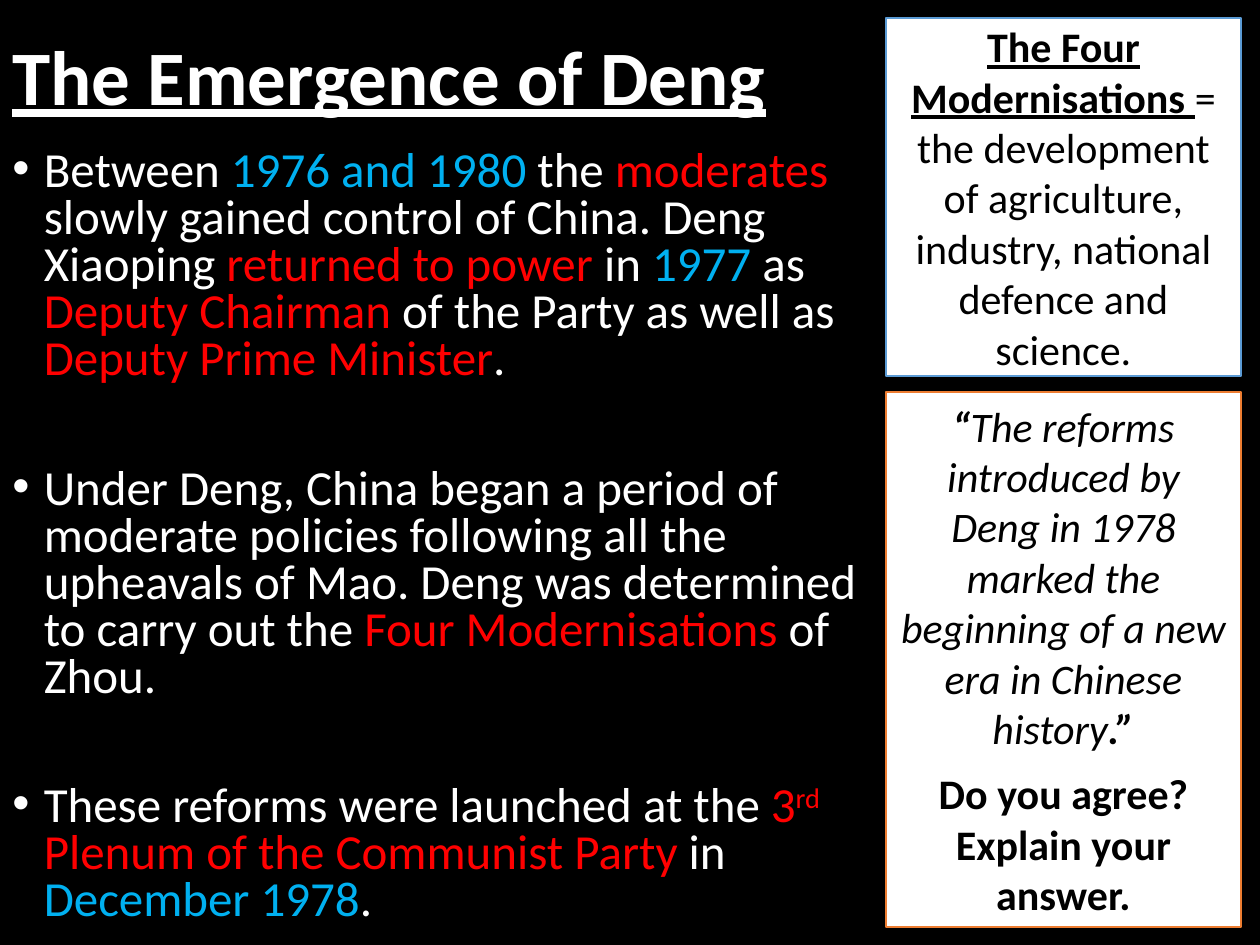
from pptx import Presentation
from pptx import util as u
from pptx.dml.color import RGBColor
from pptx.enum import shapes, text
from lxml import etree

THEME = {
    "font": "Calibri",
    "back": "000000", "card": "FFFFFF",
    "light": "FFFFFF", "dark": "000000", "key": "FF0000", "date": "00B0F0",
    "blue": "5B9BD5", "orange": "ED7D31",
    "title": 44, "body": 28, "note": 24,
}
WIDE, HIGH = 10, 7.5

TITLE = [[("The Emergence of Deng", "light bold under")]]
BODY = [
    [("Between ", "light"), ("1976 and 1980 ", "date"), ("the ", "light"),
     ("moderates ", "key"),
     ("slowly gained control of China. Deng Xiaoping ", "light"),
     ("returned to power ", "key"), ("in ", "light"), ("1977", "date"),
     (" as ", "light"), ("Deputy Chairman ", "key"),
     ("of the Party as well as ", "light"),
     ("Deputy Prime Minister", "key"), (".", "light")],
    [("Under Deng, China began a period of moderate policies following all "
      "the upheavals of Mao. Deng was determined to carry out the ", "light"),
     ("Four Modernisations ", "key"), ("of Zhou.", "light")],
    [("These reforms were launched at the ", "light"), ("3", "key"),
     ("rd", "key super"), (" Plenum of the Communist Party ", "key"),
     ("in ", "light"), ("December 1978", "date"), (".", "light")],
]
QUOTE = [
    [("“", "dark bold italic"),
     ("The reforms introduced by Deng in 1978 marked the beginning of a new "
      "era in Chinese history", "dark italic"),
     (".”", "dark bold italic")],
    [("Do you agree? Explain your answer.", "dark bold")],
]
TERMS = [
    [("The Four Modernisations ", "dark bold under"),
     ("= the development of agriculture, industry, national defence and "
      "science.", "dark")],
]

SPLIT = 0.703
TEXTS = [
    (TITLE, (0, 0, 0.862, 0.17), "title", 0.9, (0, 0), False),
    (BODY, (0, 0.152, SPLIT, 0.848), "body", 0.8, (10, 47), True),
]
CARDS = [
    (QUOTE, (SPLIT, 0.415, 0.282, 0.566), "orange"),
    (TERMS, (SPLIT, 0.019, 0.282, 0.379), "blue"),
]


def tint(name):
    return RGBColor.from_string(THEME[name])


def place(box):
    return [u.Inches(part * side) for part, side in zip(box, (WIDE, HIGH) * 2)]


def mark(para):
    props = para._p.get_or_add_pPr()
    props.set("marL", str(u.Inches(0.25)))
    props.set("indent", str(-u.Inches(0.25)))
    space = props.nsmap["a"]
    etree.SubElement(props, f"{{{space}}}buFont", typeface="Arial")
    etree.SubElement(props, f"{{{space}}}buChar", char="•")


def write(frame, paras, size, align, lead, gaps, dots=False):
    frame.word_wrap = True
    for row, runs in enumerate(paras):
        para = frame.add_paragraph() if row else frame.paragraphs[0]
        para.alignment = align
        para.line_spacing = lead
        para.space_before = u.Pt(gaps[min(row, 1)])
        if dots:
            mark(para)
        for words, tags in runs:
            hue, *looks = tags.split()
            run = para.add_run()
            run.text = words
            font = run.font
            font.name, font.size = THEME["font"], u.Pt(THEME[size])
            font.color.rgb = tint(hue)
            font.bold = "bold" in looks
            font.italic = "italic" in looks
            font.underline = "under" in looks
            if "super" in looks:
                run._r.get_or_add_rPr().set("baseline", "30000")


def main():
    deck = Presentation()
    deck.slide_width, deck.slide_height = u.Inches(WIDE), u.Inches(HIGH)
    slide = deck.slides.add_slide(deck.slide_layouts[6])
    slide.background.fill.solid()
    slide.background.fill.fore_color.rgb = tint("back")

    for paras, box, size, lead, gaps, dots in TEXTS:
        frame = slide.shapes.add_textbox(*place(box)).text_frame
        frame.vertical_anchor = (text.MSO_ANCHOR.TOP if dots
                                 else text.MSO_ANCHOR.MIDDLE)
        write(frame, paras, size, text.PP_ALIGN.LEFT, lead, gaps, dots)

    for paras, box, edge in CARDS:
        card = slide.shapes.add_shape(shapes.MSO_SHAPE.RECTANGLE, *place(box))
        card.shadow.inherit = False
        card.fill.solid()
        card.fill.fore_color.rgb = tint("card")
        card.line.color.rgb = tint(edge)
        card.line.width = u.Pt(1)
        card.text_frame.vertical_anchor = text.MSO_ANCHOR.MIDDLE
        write(card.text_frame, paras, "note", text.PP_ALIGN.CENTER, 1, (0, 8.5))

    deck.save("out.pptx")


if __name__ == "__main__":
    main()
